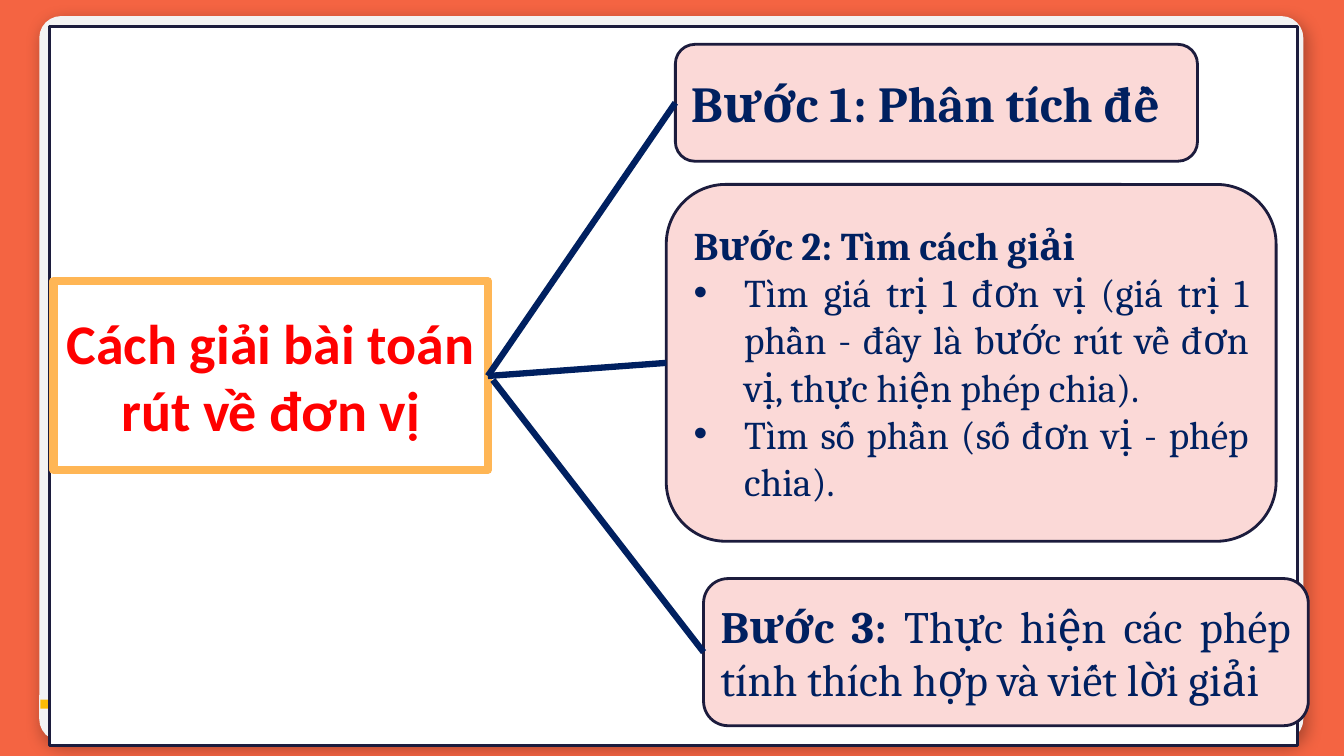
from dataclasses import dataclass

from lxml.etree import SubElement
from pptx import Presentation
from pptx.dml.color import RGBColor
from pptx.enum.shapes import MSO_CONNECTOR, MSO_SHAPE
from pptx.enum.text import MSO_ANCHOR, MSO_AUTO_SIZE, PP_ALIGN
from pptx.oxml import parse_xml
from pptx.oxml.ns import nsdecls, qn
from pptx.util import Inches, Pt

COLORS = {
    "background": "F46442", "card": "F3F3F3", "stripe": "FBBC05",
    "white": "FFFFFF", "outline": "1C1C3D", "step": "FBD9D7",
    "navy": "002060", "orange": "FFB655", "red": "FF0000",
}
Point = tuple[float, float]
Box = tuple[float, float, float, float]


@dataclass
class Paragraph:
    runs: list[tuple[str, bool]]  # text, bold
    bullet: bool = False


@dataclass
class Step:
    box: Box
    size: int
    paragraphs: list[Paragraph]
    line_start: Point
    is_list: bool = False


STEPS = [
    Step((6.7, 0.44, 5.18, 1.16), 36,
         [Paragraph([("Bước 1: Phân tích đề", True)])], (4.84, 3.73)),
    Step((6.61, 1.83, 6.05, 3.54), 28, [
        Paragraph([("Bước 2: Tìm cách giải", True)]),
        Paragraph([("Tìm giá trị 1 đơn vị (giá trị 1 phần - đây là bước rút về "
                    "đơn vị, thực hiện phép chia).", False)], True),
        Paragraph([("Tìm số phần (số đơn vị - phép chia).", False)], True),
    ], (4.84, 3.73), True),
    Step((6.98, 5.74, 6, 1.46), 32, [
        Paragraph([("Bước 3: ", True),
                   ("Thực hiện các phép tính thích hợp và viết lời giải", False)]),
    ], (4.89, 3.77)),
]

# Bezier outlines: a start point, then two controls and an end for each curve
TITLE_BOX = (0.53, 2.79, 4.31, 1.87)
BRUSH_STROKE = [
    (0.53, 3.73), (0.58, 3.3), (0.6, 2.67), (0.84, 2.79),
    (2.25, 2.46), (3.87, 2.83), (4.53, 2.79),
    (4.76, 2.7), (4.73, 3.2), (4.84, 3.73),
    (4.84, 4.2), (4.65, 4.63), (4.53, 4.66),
    (3.21, 4.58), (2.76, 4.35), (0.84, 4.66),
    (0.77, 4.68), (0.54, 4.41), (0.53, 3.73),
]
BRUSH_INSIDE = [
    (0.53, 3.73), (0.53, 3.21), (0.68, 2.72), (0.84, 2.79),
    (2.08, 2.71), (3.57, 2.86), (4.53, 2.79),
    (4.7, 2.88), (4.94, 3.34), (4.84, 3.73),
    (4.81, 4.31), (4.68, 4.68), (4.53, 4.66),
    (2.92, 4.53), (1.88, 4.8), (0.84, 4.66),
    (0.64, 4.54), (0.52, 4.2), (0.53, 3.73),
]


def rgb(name: str) -> RGBColor:
    return RGBColor.from_string(COLORS[name])


def set_paint(sp, fill: str, line: str | None = None, width: float = 2) -> None:
    sp.fill.solid()
    sp.fill.fore_color.rgb = rgb(fill)
    if line:
        sp.line.color.rgb = rgb(line)
        sp.line.width = Pt(width)
    else:
        sp.line.fill.background()


def add_box(s, kind: MSO_SHAPE, box: Box, fill: str, line: str | None = None):
    sp = s.shapes.add_shape(kind, *map(Inches, box))
    sp.shadow.inherit = False
    set_paint(sp, fill, line)
    return sp


def place_placeholder(s, sp, box: Box, geometry: str) -> None:
    """Move a placeholder to its box and to the front, and give it an outline."""
    for name, value in zip(("left", "top", "width", "height"), box):
        setattr(sp, name, Inches(value))
    sp.element.spPr.append(parse_xml(geometry))
    s.shapes.element.append(sp.element)


def curve_path(outline: list[Point], flag: str) -> str:
    """Return a closed Bezier path, relative to the title box, with one paint switched off."""
    left, top, width, height = TITLE_BOX
    points = [f'<a:pt x="{Inches(x - left)}" y="{Inches(y - top)}"/>' for x, y in outline]
    curves = "".join(f'<a:cubicBezTo>{"".join(points[i:i + 3])}</a:cubicBezTo>'
                     for i in range(1, len(points), 3))
    return (f'<a:path w="{Inches(width)}" h="{Inches(height)}" {flag}>'
            f'<a:moveTo>{points[0]}</a:moveTo>{curves}<a:close/></a:path>')


def brush_geometry() -> str:
    paths = curve_path(BRUSH_STROKE, 'fill="none"') + curve_path(BRUSH_INSIDE, 'stroke="0"')
    return (f'<a:custGeom {nsdecls("a")}><a:avLst/><a:gdLst/><a:ahLst/><a:cxnLst/>'
            f'<a:rect l="l" t="t" r="r" b="b"/><a:pathLst>{paths}</a:pathLst></a:custGeom>')


def write_text(sp, paragraphs: list[Paragraph], align: PP_ALIGN, font: dict, color: str) -> None:
    tf = sp.text_frame
    frame = {"word_wrap": True, "auto_size": MSO_AUTO_SIZE.NONE,
             "vertical_anchor": MSO_ANCHOR.MIDDLE}
    for name, value in frame.items():
        setattr(tf, name, value)
    for i, paragraph in enumerate(paragraphs):
        p = tf.paragraphs[0] if i == 0 else tf.add_paragraph()
        p.alignment = align
        p.space_before = Pt(0)
        set_bullet(p, paragraph.bullet)
        for text, bold in paragraph.runs:
            r = p.add_run()
            r.text = text
            for name, value in {**font, "bold": bold}.items():
                setattr(r.font, name, value)
            r.font.color.rgb = rgb(color)


def set_bullet(p, bullet: bool) -> None:
    pPr = p._p.get_or_add_pPr()
    indent = Inches(0.5) if bullet else 0
    pPr.set("marL", str(indent))
    pPr.set("indent", str(-indent))
    if bullet:
        SubElement(pPr, qn("a:buFont"), typeface="Arial")
        SubElement(pPr, qn("a:buChar"), char="•")
    else:
        SubElement(pPr, qn("a:buNone"))


def add_step(s, step: Step, body) -> None:
    if step.is_list:
        sp = body
        place_placeholder(s, sp, step.box,
                          f'<a:prstGeom {nsdecls("a")} prst="roundRect"><a:avLst/></a:prstGeom>')
        set_paint(sp, "step", "outline")
    else:
        sp = add_box(s, MSO_SHAPE.ROUNDED_RECTANGLE, step.box, "step", "outline")
    write_text(sp, step.paragraphs, PP_ALIGN.JUSTIFY,
               {"name": "Cambria", "size": Pt(step.size)}, "navy")
    left, top, _, height = step.box
    line = s.shapes.add_connector(
        MSO_CONNECTOR.STRAIGHT, *map(Inches, (*step.line_start, left, top + height / 2)))
    line.line.color.rgb = rgb("navy")
    line.line.width = Pt(4.5)
    SubElement(line.element.spPr, qn("a:effectLst"))


def add_card(s) -> None:
    card = add_box(s, MSO_SHAPE.ROUNDED_RECTANGLE, (0.39, 0.16, 12.54, 7.19), "card")
    card.adjustments[0] = 0.03
    effects = card.element.spPr.find(qn("a:effectLst"))
    effects.append(parse_xml(
        f'<a:outerShdw {nsdecls("a")} blurRad="{Pt(12.4)}" dist="{Pt(5.2)}" dir="{57 * 60000}">'
        '<a:srgbClr val="000000"><a:alpha val="32000"/></a:srgbClr></a:outerShdw>'))
    add_box(s, MSO_SHAPE.RECTANGLE, (0.4, 6.94, 12.54, 0.09), "stripe")
    add_box(s, MSO_SHAPE.RECTANGLE, (0.49, 0.26, 12.38, 7.14), "white", "outline")


def main() -> None:
    prs = Presentation()
    prs.slide_width, prs.slide_height = Inches(40 / 3), Inches(7.5)
    s = prs.slides.add_slide(prs.slide_layouts[1])
    s.background.fill.solid()
    s.background.fill.fore_color.rgb = rgb("background")
    title, body = s.placeholders

    add_card(s)
    place_placeholder(s, title, TITLE_BOX, brush_geometry())
    set_paint(title, "white", "orange", 6)
    write_text(title, [Paragraph([("Cách giải bài toán rút về đơn vị", True)])],
               PP_ALIGN.CENTER, {"name": "Calibri", "size": Pt(40)}, "red")
    for step in STEPS:
        add_step(s, step, body)
    prs.save("out.pptx")


if __name__ == "__main__":
    main()
